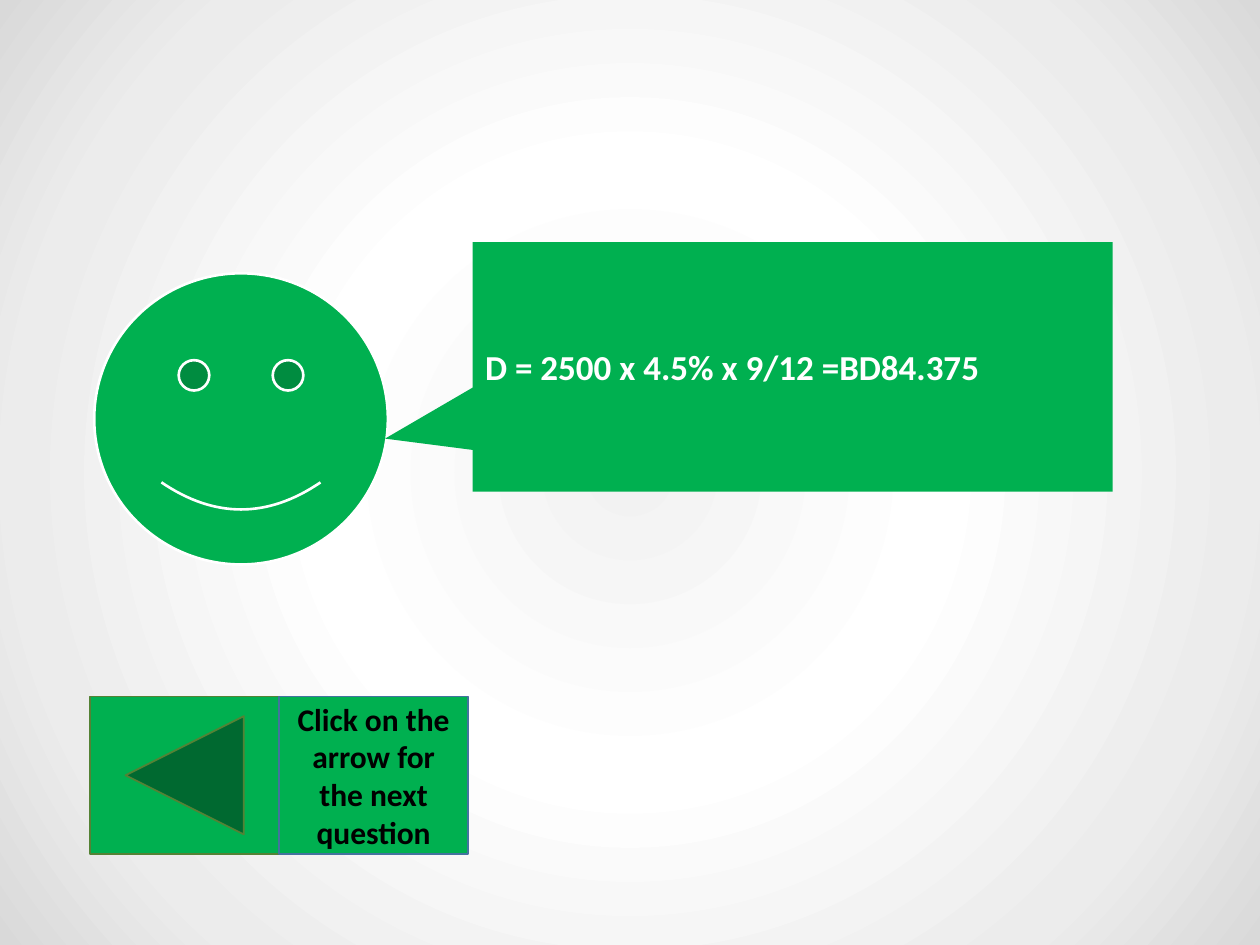
from pptx import Presentation
from pptx.dml.color import RGBColor
from pptx.enum.shapes import MSO_SHAPE as Kind
from pptx.enum.text import MSO_ANCHOR as Anchor, PP_ALIGN as Align
from pptx.oxml import parse_xml
from pptx.oxml.ns import nsdecls
from pptx.util import Cm, Pt

GREEN, WHITE, BLACK = "00B050", "FFFFFF", "000000"


def paint(color, value):
    color.rgb = RGBColor.from_string(value)


def backdrop(slide, stops):
    """Fill the background with a gradient that spreads from the centre."""
    marks = "".join(
        f'<a:gs pos="{pos * 1000}"><a:srgbClr val="{value}"/></a:gs>'
        for pos, value in stops
    )
    fill = slide.background.fill
    fill.solid()
    props = slide._element.cSld.bg.bgPr
    props.replace(props[0], parse_xml(
        f'<a:gradFill {nsdecls("a")} rotWithShape="1"><a:gsLst>{marks}</a:gsLst>'
        '<a:path path="circle"><a:fillToRect l="50000" t="50000" r="50000" b="50000"/>'
        '</a:path></a:gradFill>'))


def add_part(slide, kind, box, line=None, width=1):
    part = slide.shapes.add_shape(kind, *map(Cm, box))
    part.shadow.inherit = False
    part.fill.solid()
    paint(part.fill.fore_color, GREEN)
    if line:
        paint(part.line.color, line)
        part.line.width = Pt(width)
    else:
        part.line.fill.background()
    return part


def write(part, text, size, color, align):
    frame = part.text_frame
    frame.word_wrap = True
    frame.vertical_anchor = Anchor.MIDDLE
    para = frame.paragraphs[0]
    para.text = text
    para.alignment = align
    font = para.font
    font.name, font.size, font.bold = "Calibri", Pt(size), True
    paint(font.color, color)


def add_answer(slide, box, text):
    """A smiling face that speaks the answer."""
    left, top, width, height = box
    add_part(slide, Kind.SMILEY_FACE, (left, top + 0.63, 5.92, 5.87), WHITE, 1.5)
    shift = 7.63
    bubble = add_part(slide, Kind.RECTANGULAR_CALLOUT,
                      (left + shift, top, width - shift, height))
    bubble.adjustments[0], bubble.adjustments[1] = -0.637, 0.288
    write(bubble, text, 20, WHITE, Align.LEFT)


def add_next(slide, box, text):
    """An arrow button with its label beside it, in two equal halves."""
    left, top, width, height = box
    half = width / 2
    add_part(slide, Kind.ACTION_BUTTON_BACK_OR_PREVIOUS,
             (left, top, half, height), "548235")
    label = add_part(slide, Kind.PENTAGON, (left + half, top, half, height), "43739E")
    label.adjustments[0] = 0
    label._element.spPr.xfrm.set("flipH", "1")
    write(label, text, 18, BLACK, Align.CENTER)


def main():
    deck = Presentation()
    deck.slide_width, deck.slide_height = Cm(25.4), Cm(19.05)
    slide = deck.slides.add_slide(deck.slide_layouts[6])
    backdrop(slide, [(0, "F2F2F2"), (39, WHITE), (78, "ECECEC"), (100, "D9D9D9")])
    add_answer(slide, (1.9, 4.88, 20.53, 5.03), "D = 2500 x 4.5% x 9/12 =BD84.375")
    add_next(slide, (1.82, 14.04, 7.62, 3.18), "Click on the arrow for the next question")
    deck.save("out.pptx")


if __name__ == "__main__":
    main()
